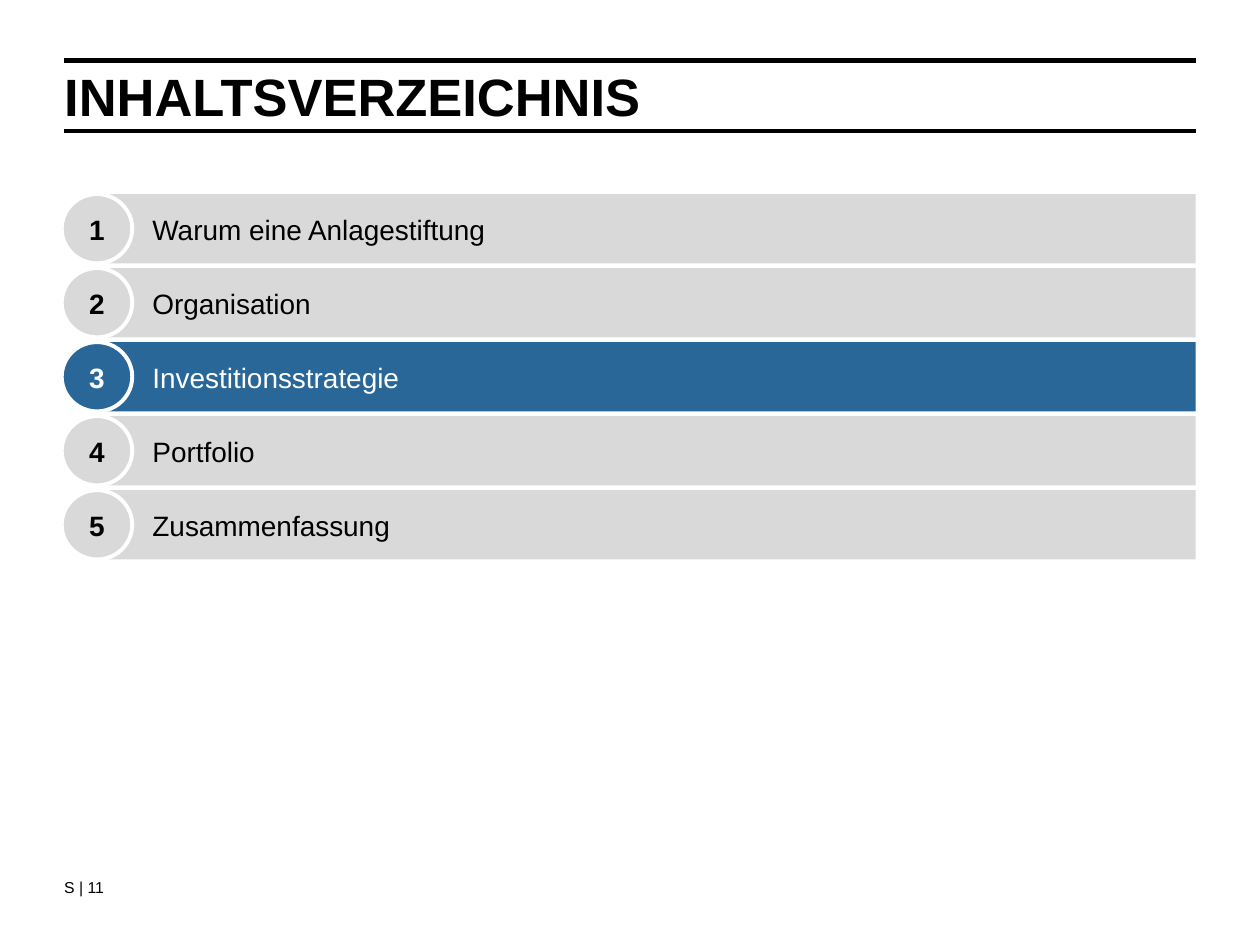
from dataclasses import dataclass

import pptx
import pptx.dml.color
import pptx.enum.shapes
import pptx.enum.text
import pptx.oxml
import pptx.oxml.ns
import pptx.util
from pptx.util import Inches

FONT = "Arial"
BLACK, WHITE, GREY, BLUE = "000000", "FFFFFF", "D9D9D9", "296799"
LEFT, RIGHT = 0.51, 9.49
FIRST_TOP, LAST_TOP, ROW_HEIGHT = 1.54, 3.89, 0.55


@dataclass
class Chapter:
    number: int
    heading: str
    current: bool = False


CHAPTERS = [
    Chapter(1, "Warum eine Anlagestiftung"),
    Chapter(2, "Organisation"),
    Chapter(3, "Investitionsstrategie", current=True),
    Chapter(4, "Portfolio"),
    Chapter(5, "Zusammenfassung"),
]


def rgb(value: str) -> pptx.dml.color.RGBColor:
    return pptx.dml.color.RGBColor.from_string(value)


def write(shape, text: str, size: float, color: str, insets: tuple,
          bold: bool = False, spacing=1.06,
          align=pptx.enum.text.PP_ALIGN.LEFT,
          anchor=pptx.enum.text.MSO_ANCHOR.MIDDLE) -> None:
    frame = shape.text_frame
    frame.word_wrap = True
    frame.auto_size = pptx.enum.text.MSO_AUTO_SIZE.NONE
    frame.vertical_anchor = anchor
    (frame.margin_left, frame.margin_top,
     frame.margin_right, frame.margin_bottom) = map(Inches, insets)
    frame.text = text
    paragraph = frame.paragraphs[0]
    paragraph.alignment = align
    paragraph.line_spacing = spacing
    paragraph.font.name = FONT
    paragraph.font.size = pptx.util.Pt(size)
    paragraph.font.bold = bold
    paragraph.font.color.rgb = rgb(color)


def add_rule(slide, y: float) -> None:
    rule = slide.shapes.add_connector(
        pptx.enum.shapes.MSO_CONNECTOR.STRAIGHT,
        Inches(LEFT), Inches(y), Inches(RIGHT), Inches(y))
    rule.line.color.rgb = rgb(BLACK)
    rule.line.width = pptx.util.Pt(2.8)
    rule._element.spPr.append(pptx.oxml.parse_xml(
        f"<a:effectLst {pptx.oxml.ns.nsdecls('a')}/>"))


def add_filled(slide, kind, left: float, top: float, width: float, fill: str):
    shape = slide.shapes.add_shape(
        kind, Inches(left), Inches(top), Inches(width), Inches(ROW_HEIGHT))
    shape.shadow.inherit = False
    shape.fill.solid()
    shape.fill.fore_color.rgb = rgb(fill)
    shape.line.fill.background()
    return shape


def add_chapter(slide, chapter: Chapter, top: float) -> None:
    fill, color = (BLUE, WHITE) if chapter.current else (GREY, BLACK)
    kinds = pptx.enum.shapes.MSO_SHAPE
    bar = add_filled(slide, kinds.RECTANGLE, 0.78, top, 8.71, fill)
    write(bar, chapter.heading, 16, color, (0.43, 0.04, 0.04, 0.04))
    badge = add_filled(slide, kinds.OVAL, 0.49, top, 0.56, fill)
    badge.line.color.rgb = rgb(WHITE)
    badge.line.width = pptx.util.Pt(2.25)
    write(badge, str(chapter.number), 16, color, (0.04,) * 4, bold=True,
          align=pptx.enum.text.PP_ALIGN.CENTER)


def main() -> None:
    deck = pptx.Presentation()
    deck.slide_width, deck.slide_height = Inches(10), Inches(7.5)
    slide = deck.slides.add_slide(deck.slide_layouts.get_by_name("Title Only"))
    top_anchor = pptx.enum.text.MSO_ANCHOR.TOP

    for y in (0.48, 1.04):
        add_rule(slide, y)

    title = slide.shapes.title
    title.left, title.top = Inches(LEFT), Inches(0.56)
    title.width, title.height = Inches(RIGHT - LEFT), Inches(0.39)
    write(title, "INHALTSVERZEICHNIS", 30, BLACK, (0, 0.03, 0, 0), bold=True,
          spacing=pptx.util.Pt(30), anchor=top_anchor)

    page_number = slide.shapes.add_textbox(
        Inches(LEFT), Inches(6.94), Inches(0.75), Inches(0.28))
    write(page_number, "S | 11", 9, BLACK, (0, 0.02, 0, 0), anchor=top_anchor)

    pitch = (LAST_TOP - FIRST_TOP) / (len(CHAPTERS) - 1)
    for row, chapter in enumerate(CHAPTERS):
        add_chapter(slide, chapter, FIRST_TOP + row * pitch)

    deck.save("out.pptx")


if __name__ == "__main__":
    main()
